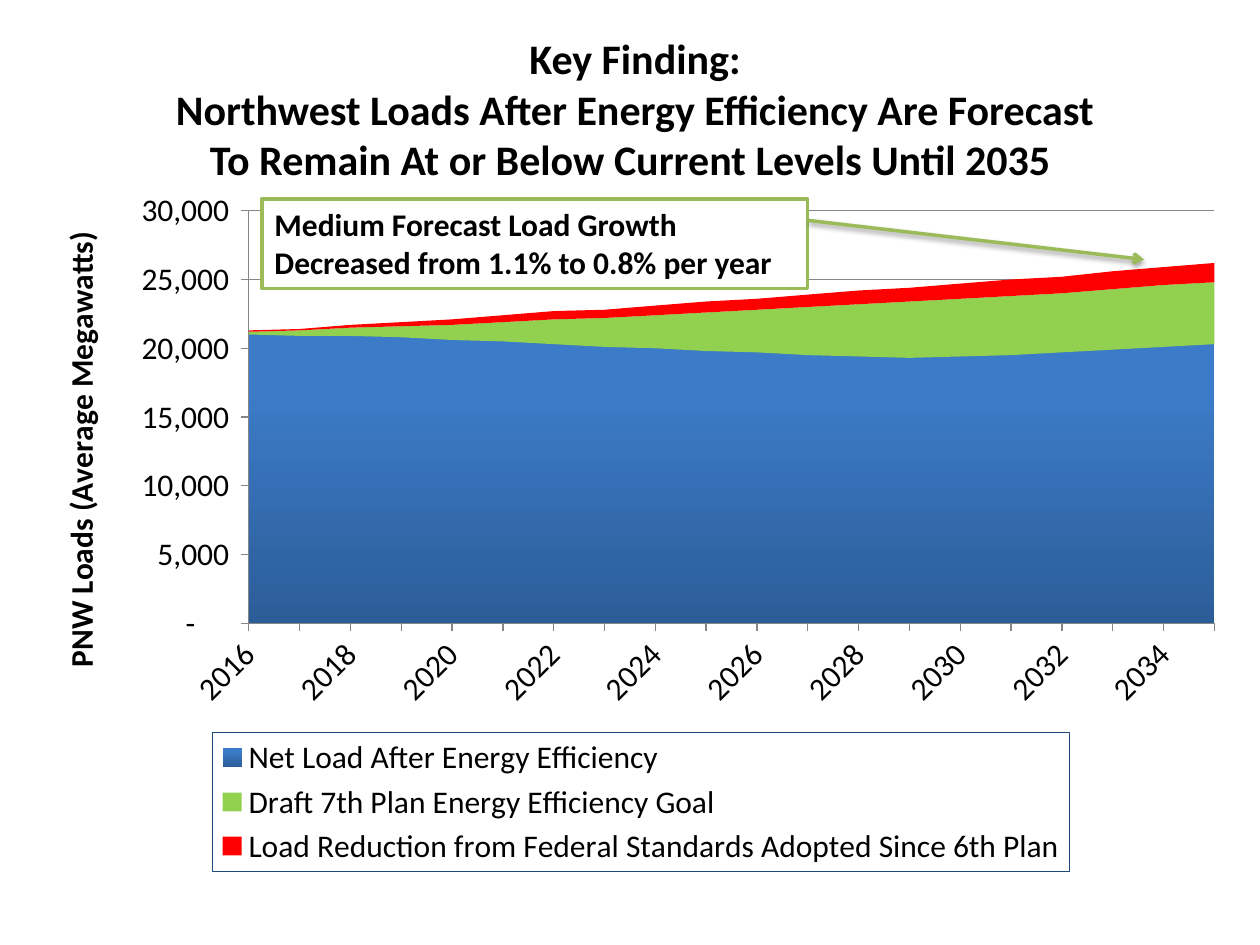
from dataclasses import dataclass

from lxml import etree
from pptx import Presentation
from pptx.chart.data import CategoryChartData
from pptx.dml.color import RGBColor
from pptx.enum.chart import XL_CHART_TYPE as CT, XL_LEGEND_POSITION as LP, XL_TICK_MARK as TM
from pptx.enum.shapes import MSO_CONNECTOR as MC, MSO_SHAPE as MS
from pptx.enum.text import MSO_ANCHOR as MA, PP_ALIGN as PA
from pptx.oxml import parse_xml
from pptx.oxml.ns import nsdecls, qn
from pptx.util import Inches, Pt

FONT, BLACK, WHITE, GREEN, GRAY = "Calibri", "000000", "FFFFFF", "9BBB59", "868686"
NUMBER_FORMAT = '_(* #,##0_);_(* \\(#,##0\\);_(* "-"??_);_('


@dataclass
class Series:
    name: str
    colors: tuple[str, ...]
    values: tuple[int, ...]


SERIES = (
    Series("Net Load After Energy Efficiency", ("2C5D98", "3C7BC7"),
           (21000, 20900, 20900, 20800, 20600, 20500, 20300, 20100, 20000, 19800,
            19700, 19500, 19400, 19300, 19400, 19500, 19700, 19900, 20100, 20300)),
    Series("Draft 7th Plan Energy Efficiency Goal", ("92D050",),
           (200, 400, 600, 800, 1100, 1400, 1800, 2100, 2400, 2800,
            3100, 3500, 3800, 4100, 4200, 4300, 4300, 4400, 4500, 4500)),
    Series("Load Reduction from Federal Standards Adopted Since 6th Plan", ("FF0000",),
           (100, 100, 200, 300, 400, 500, 600, 600, 700, 800,
            800, 900, 1000, 1000, 1100, 1200, 1200, 1300, 1300, 1400)),
)


def rgb(value: str) -> RGBColor:
    return RGBColor.from_string(value)


def write(tf, text: str, *, size: float, bold: bool = True, color: str = BLACK,
          align=PA.LEFT, anchor=MA.MIDDLE) -> None:
    tf.word_wrap = True
    tf.vertical_anchor = anchor
    p = tf.paragraphs[0]
    p.text, p.alignment = text, align
    for r in p.runs:
        style(r.font, size, bold, color)


def style(font, size: float, bold: bool = False, color: str = BLACK) -> None:
    font.name, font.size, font.bold = FONT, Pt(size), bold
    font.color.rgb = rgb(color)


def outline(line, color: str, width: float) -> None:
    line.color.rgb = rgb(color)
    line.width = Pt(width)


def manual_layout(x: float, y: float, w: float, h: float, inner: bool = False):
    target = '<c:layoutTarget val="inner"/>' if inner else ""
    sizes = "".join(f'<c:{k} val="{v}"/>' for k, v in zip("xywh", (x, y, w, h)))
    return parse_xml(f'<c:layout {nsdecls("c")}><c:manualLayout>{target}<c:xMode val="edge"/>'
                     f'<c:yMode val="edge"/>{sizes}</c:manualLayout></c:layout>')


def paint(fill, colors: tuple[str, ...]) -> None:
    if len(colors) == 1:
        fill.solid()
        fill.fore_color.rgb = rgb(colors[0])
        return
    fill.gradient()
    fill.gradient_angle = 90
    for stop, color, position in zip(fill.gradient_stops, colors, (0, 0.8)):
        stop.color.rgb = rgb(color)
        stop.position = position


def style_axes(chart) -> None:
    for axis in (chart.category_axis, chart.value_axis):
        axis.major_tick_mark, axis.minor_tick_mark = TM.OUTSIDE, TM.NONE
        outline(axis.format.line, GRAY, 0.75)
        style(axis.tick_labels.font, 18)
    cat, val = chart.category_axis, chart.value_axis
    cat.has_major_gridlines = False
    cat._element.find(qn("c:txPr")).find(qn("a:bodyPr")).set("rot", "-2700000")
    skip = parse_xml(f'<c:tickLblSkip {nsdecls("c")} val="2"/>')
    cat._element.find(qn("c:noMultiLvlLbl")).addprevious(skip)
    val.minimum_scale, val.maximum_scale, val.major_unit = 0, 30000, 5000
    val.has_major_gridlines = True
    outline(val.major_gridlines.format.line, GRAY, 0.75)
    val.tick_labels.number_format = NUMBER_FORMAT
    val.tick_labels.number_format_is_linked = False
    val._element.find(qn("c:crossBetween")).set("val", "midCat")
    tf = val.axis_title.text_frame
    tf.text = "PNW Loads (Average Megawatts)"
    style(tf.paragraphs[0].runs[0].font, 18, True)


def style_legend(chart) -> None:
    chart.has_legend = True
    legend = chart.legend
    legend.position, legend.include_in_layout = LP.BOTTOM, False
    style(legend.font, 18)
    overlay = legend._element.find(qn("c:overlay"))
    for old in legend._element.findall(qn("c:layout")):
        legend._element.remove(old)
    overlay.addprevious(manual_layout(0.15, 0.8, 0.71, 0.2))
    overlay.addnext(parse_xml(
        f'<c:spPr {nsdecls("c", "a")}><a:ln w="9525"><a:solidFill>'
        '<a:srgbClr val="1F497D"/></a:solidFill></a:ln></c:spPr>'))


def add_load_chart(s) -> None:
    data = CategoryChartData()
    data.categories = [str(year) for year in range(2016, 2036)]
    for item in SERIES:
        data.add_series(item.name, item.values)
    chart = s.shapes.add_chart(CT.AREA_STACKED, Inches(0.25), Inches(1.42),
                               Inches(9.58), Inches(5.5), data).chart
    chart.has_title = False
    style(chart.font, 18)
    for series, item in zip(chart.plots[0].series, SERIES):
        paint(series.format.fill, item.colors)
    style_axes(chart)
    style_legend(chart)
    area = chart._chartSpace.find(qn("c:chart")).find(qn("c:plotArea"))
    for old in area.findall(qn("c:layout")):
        area.remove(old)
    area.insert(0, manual_layout(0.18, 0.046, 0.8, 0.596, inner=True))


def add_callout(s) -> None:
    sp = s.shapes.add_shape(MS.RECTANGLE, Inches(2.08), Inches(1.58), Inches(4.33), Inches(0.71))
    sp.shadow.inherit = False
    paint(sp.fill, (WHITE,))
    outline(sp.line, GREEN, 2)
    write(sp.text_frame, "Medium Forecast Load Growth Decreased from 1.1% to 0.8% per year",
          size=18, anchor=MA.TOP)


def add_arrow(s) -> None:
    line = s.shapes.add_connector(MC.STRAIGHT, Inches(6.42), Inches(1.75), Inches(9.08), Inches(2.06))
    outline(line.line, GREEN, 2)
    etree.SubElement(line.line._get_or_add_ln(), qn("a:tailEnd"), type="arrow")
    line._element.spPr.append(parse_xml(
        f'<a:effectLst {nsdecls("a")}><a:outerShdw blurRad="{Pt(3.1)}" dist="{Pt(1.6)}" '
        'dir="5400000" rotWithShape="0"><a:srgbClr val="000000"><a:alpha val="38000"/>'
        '</a:srgbClr></a:outerShdw></a:effectLst>'))


def main() -> None:
    """Build the load forecast slide."""
    prs = Presentation()
    prs.slide_width, prs.slide_height = Inches(10), Inches(7.5)
    s = prs.slides.add_slide(prs.slide_layouts[6])
    title = s.shapes.add_textbox(Inches(0.25), Inches(0.3), Inches(9.58), Inches(1.12))
    write(title.text_frame, "Key Finding:\vNorthwest Loads After Energy Efficiency Are Forecast\v"
          "To Remain At or Below Current Levels Until 2035 ", size=24, align=PA.CENTER)
    add_load_chart(s)
    add_callout(s)
    add_arrow(s)
    prs.save("out.pptx")


if __name__ == "__main__":
    main()
